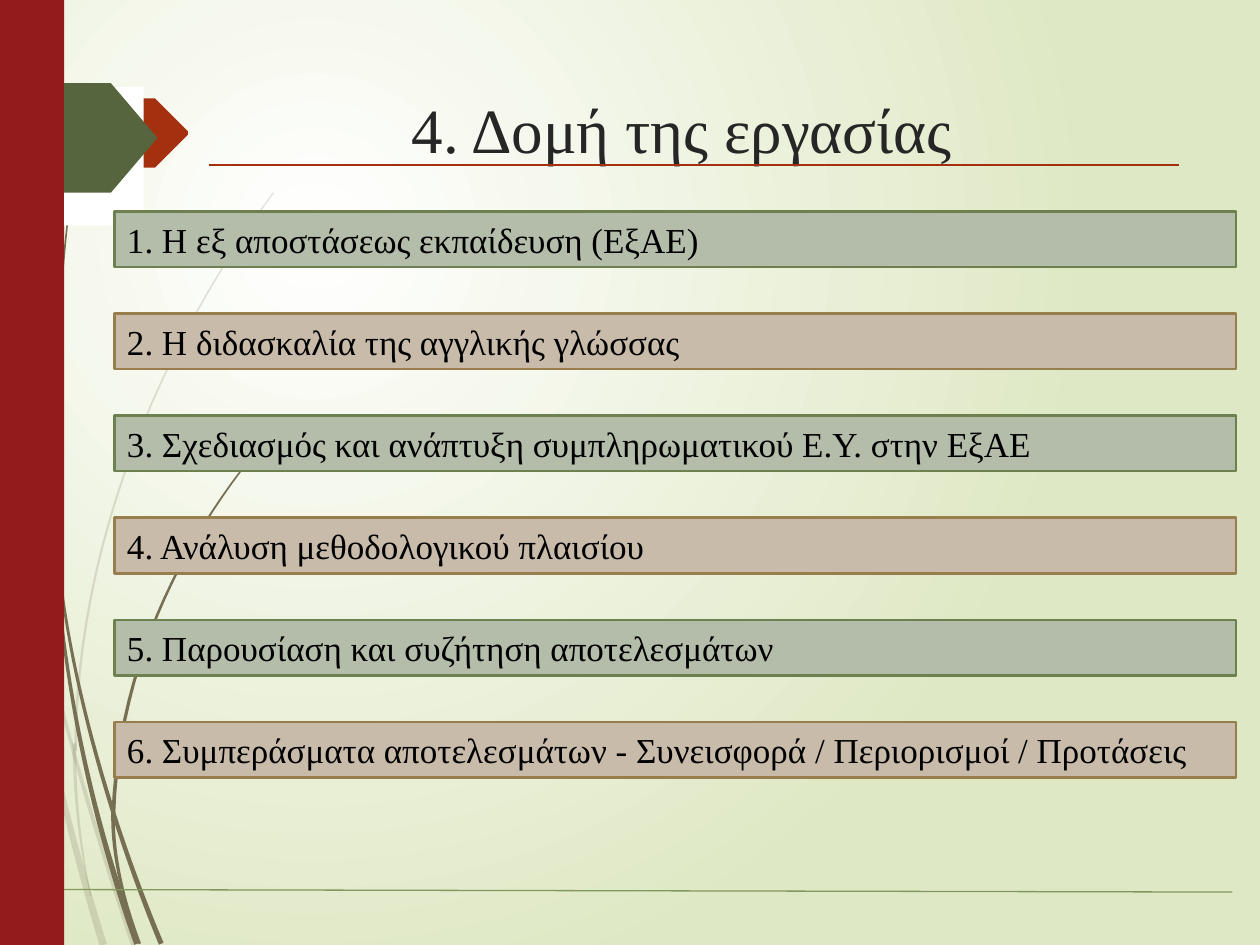
from math import hypot

from lxml.etree import SubElement
from pptx import Presentation
from pptx.dml.color import RGBColor
from pptx.enum.shapes import MSO_CONNECTOR, MSO_SHAPE
from pptx.enum.text import MSO_ANCHOR, PP_ALIGN
from pptx.oxml.ns import qn
from pptx.util import Inches, Pt

TITLE = "4. Δομή της εργασίας "
CHAPTERS = [
    "1. Η εξ αποστάσεως εκπαίδευση (ΕξΑΕ)",
    "2. Η διδασκαλία της αγγλικής γλώσσας",
    "3. Σχεδιασμός και ανάπτυξη συμπληρωματικού Ε.Υ. στην ΕξΑΕ",
    "4. Ανάλυση μεθοδολογικού πλαισίου",
    "5. Παρουσίαση και συζήτηση αποτελεσμάτων",
    "6. Συμπεράσματα αποτελεσμάτων - Συνεισφορά / Περιορισμοί / Προτάσεις",
]
COLORS = {
    "white": "FFFFFF", "meadow": "DFE8C4", "grass": "766F54", "band": "931B1B",
    "rust": "A53010", "moss": "56653E", "footer": "81985E", "title": "262626",
    "text": "000000", "sage": "B4BCAA", "sage_edge": "6D804F",
    "sand": "C8BBAA", "sand_edge": "987D4D",
}
BAR_STYLES = [("sage", "sage_edge"), ("sand", "sand_edge")]
BAR = {"left": 0.91, "top": 1.68, "width": 8.9, "height": 0.44, "pitch": 0.81}
HEADING = {"left": 1.54, "top": 0.6, "width": 7.87, "height": 0.84}
FONT = "Times New Roman"
RULES = [("rust", 1.66, 1.31, 9.36, 1.31), ("footer", 0.51, 7.06, 9.78, 7.08)]
PANELS = [
    (MSO_SHAPE.RECTANGLE, "band", 0, 0, 0.51, 7.5),
    (MSO_SHAPE.RECTANGLE, "white", 0.51, 0.69, 0.63, 1.1),
    (MSO_SHAPE.PENTAGON, "moss", 0.51, 0.66, 0.74, 0.87),
]
ARROW = [(0, 0.78), (1.23, 0.78), (1.49, 1.04), (1.49, 1.07), (1.23, 1.33), (0, 1.33)]
PALE_BLADES = [
    ([(0.1, 3.5), (0.25, 4.9), (0.62, 6.2), (1.06, 7.5)], 0.01, 0.04),
    ([(0.08, 3.5), (0.14, 4.9), (0.45, 6.3), (0.82, 7.5)], 0.01, 0.06),
    ([(0.59, 5.9), (0.59, 6.3), (0.63, 6.7), (0.72, 7.11)], 0.03, 0.01),
    ([(0.6, 5.96), (0.6, 4.3), (1.3, 2.7), (2.17, 1.53)], 0.02, 0.01),
]
DARK_BLADES = [
    ([(0.48, 4.6), (0.6, 5.6), (0.95, 6.7), (1.28, 7.49)], 0.02, 0.04),
    ([(0.46, 4.65), (0.55, 5.7), (0.8, 6.7), (1.09, 7.49)], 0.02, 0.05),
    ([(0.48, 4.72), (0.42, 3.5), (0.43, 2.5), (0.58, 1.41)], 0.03, 0.01),
    ([(0.9, 6.45), (0.95, 5.2), (1.5, 4.2), (2.15, 3.44)], 0.03, 0.01),
    ([(0.9, 6.4), (0.88, 6.8), (1, 7.2), (1.11, 7.49)], 0.03, 0.02),
]


def rgb(key):
    return RGBColor.from_string(COLORS[key])


def paint(shape, fill, edge=None):
    shape.shadow.inherit = False
    shape.fill.solid()
    shape.fill.fore_color.rgb = rgb(fill)
    if edge:
        shape.line.color.rgb, shape.line.width = rgb(edge), Pt(1.5)
    else:
        shape.line.fill.background()


def outline(shapes, points, fill):
    start, *rest = [(Inches(x), Inches(y)) for x, y in points]
    builder = shapes.build_freeform(*start)
    builder.add_line_segments(rest, close=True)
    shape = builder.convert_to_shape()
    paint(shape, fill)
    return shape


def blend(weights, points):
    return [sum(w * p[axis] for w, p in zip(weights, points)) for axis in (0, 1)]


def taper(spine, root, tip, steps=24):
    left, right = [], []
    slopes = [(b[0] - a[0], b[1] - a[1]) for a, b in zip(spine, spine[1:])]
    for step in range(steps + 1):
        t = step / steps
        s = 1 - t
        x, y = blend((s ** 3, 3 * s * s * t, 3 * s * t * t, t ** 3), spine)
        dx, dy = blend((s * s, 2 * s * t, t * t), slopes)
        half = (root * s + tip * t) / 2 / hypot(dx, dy)
        left.append((x - dy * half, y + dx * half))
        right.append((x + dy * half, y - dx * half))
    return left + right[::-1]


def write(shape, text, size, color, align):
    frame = shape.text_frame
    frame.word_wrap, frame.vertical_anchor = True, MSO_ANCHOR.MIDDLE
    paragraph = frame.paragraphs[0]
    paragraph.alignment = align
    run = paragraph.add_run()
    run.text = text
    for name, value in {"name": FONT, "size": Pt(size)}.items():
        setattr(run.font, name, value)
    run.font.color.rgb = rgb(color)


def main():
    deck = Presentation()
    deck.slide_width, deck.slide_height = Inches(10), Inches(7.5)
    slide = deck.slides.add_slide(deck.slide_layouts[5])
    shapes = slide.shapes

    backdrop = slide.background.fill
    backdrop.gradient()
    for stop, key, position in zip(backdrop.gradient_stops, ("white", "meadow"), (0, 1)):
        stop.color.rgb, stop.position = rgb(key), position
    gradient = slide.element.find(".//" + qn("a:gradFill"))
    gradient.remove(gradient.find(qn("a:lin")))
    glow = SubElement(gradient, qn("a:path"), path="circle")
    SubElement(glow, qn("a:fillToRect"), l="50000", t="50000", r="100000", b="100000")

    for blade in PALE_BLADES:
        leaf = outline(shapes, taper(*blade), "grass")
        tint = leaf.element.spPr.find(".//" + qn("a:srgbClr"))
        SubElement(tint, qn("a:alpha"), val="20000")
    for blade in DARK_BLADES:
        outline(shapes, taper(*blade), "grass")
    outline(shapes, ARROW, "rust")

    for kind, fill, *box in PANELS:
        paint(shapes.add_shape(kind, *map(Inches, box)), fill)
    for color, *ends in RULES:
        rule = shapes.add_connector(MSO_CONNECTOR.STRAIGHT, *map(Inches, ends))
        rule.line.color.rgb, rule.line.width = rgb(color), Pt(0.75)
        SubElement(rule.element.spPr, qn("a:effectLst"))

    heading = shapes.title
    for name, value in HEADING.items():
        setattr(heading, name, Inches(value))
    write(heading, TITLE, 36, "title", PP_ALIGN.CENTER)

    for i, chapter in enumerate(CHAPTERS):
        box = BAR["left"], BAR["top"] + i * BAR["pitch"], BAR["width"], BAR["height"]
        bar = shapes.add_shape(MSO_SHAPE.RECTANGLE, *map(Inches, box))
        paint(bar, *BAR_STYLES[i % 2])
        write(bar, chapter, 20, "text", PP_ALIGN.LEFT)

    deck.save("out.pptx")


if __name__ == "__main__":
    main()
